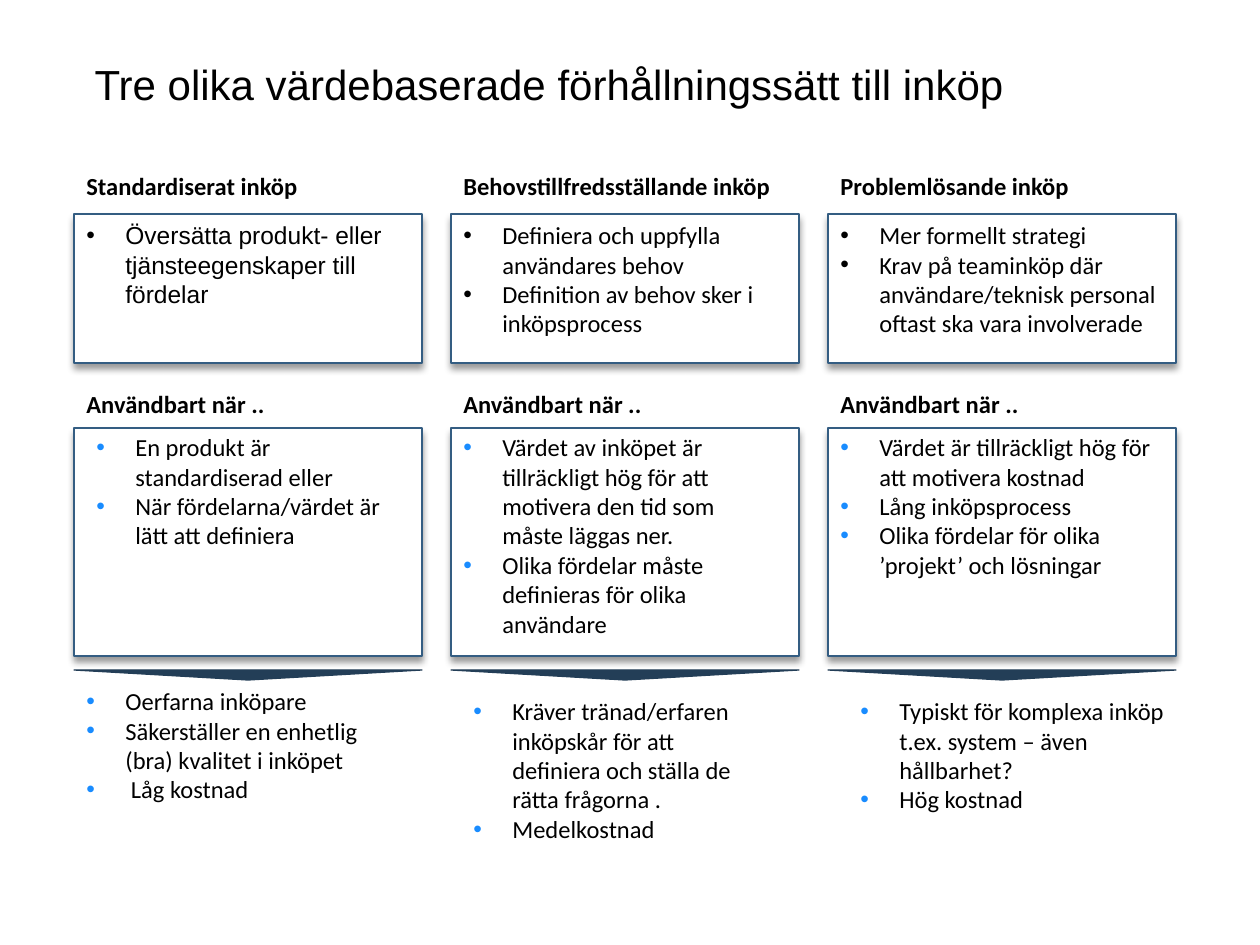
"""Build a slide comparing three value-based approaches to purchasing."""
import pptx
import pptx.dml.color
import pptx.enum.shapes
import pptx.enum.text
import pptx.util
from lxml import etree

RGBColor = pptx.dml.color.RGBColor
SHAPE = pptx.enum.shapes.MSO_SHAPE
ANCHOR = pptx.enum.text.MSO_ANCHOR
ALIGN = pptx.enum.text.PP_ALIGN

BLACK = RGBColor(0x00, 0x00, 0x00)
WHITE = RGBColor(0xFF, 0xFF, 0xFF)
OUTLINE = RGBColor(0x34, 0x5D, 0x82)
NAVY = RGBColor(0x23, 0x3E, 0x57)
BRIGHT = RGBColor(0x19, 0x8C, 0xFF)

PX = 914400 // 126
INDENT = 39
LEFT, PITCH, WIDTH = 74, 377, 348
HEADING_HEIGHT = 42
DEFINITION_HEADING, DEFINITION_TOP, DEFINITION_HEIGHT = 165, 214, 149
USE_HEADING, USE_TOP, USE_TEXT_TOP, USE_HEIGHT = 383, 428, 426, 228
ARROW_TOP, ARROW_HEIGHT = 670, 10

TITLE = "Tre olika värdebaserade förhållningssätt till inköp"
USE_TITLE, USE_TITLE_WIDTH = "Användbart när ..", 205
COLUMNS = [
    {
        "heading": ("Standardiserat inköp", 238),
        "definition": (["Översätta produkt- eller tjänsteegenskaper till fördelar"], 328, "Arial"),
        "use": (["En produkt är standardiserad eller",
                 "När fördelarna/värdet är lätt att definiera"], 10, 328, 131),
        "result": (["Oerfarna inköpare",
                    "Säkerställer en enhetlig (bra) kvalitet i inköpet",
                    " Låg kostnad"], 0, 680, 315, 161),
    },
    {
        "heading": ("Behovstillfredsställande inköp", 335),
        "definition": (["Definiera och uppfylla användares behov",
                        "Definition av behov sker i inköpsprocess"], 338, "Calibri"),
        "use": (["Värdet av inköpet är tillräckligt hög för att motivera den tid som måste läggas ner.",
                 "Olika fördelar måste definieras för olika användare"], 0, 315, 220),
        "result": (["Kräver tränad/erfaren inköpskår för att definiera och ställa de rätta frågorna .",
                    "Medelkostnad"], 10, 690, 315, 190),
    },
    {
        "heading": ("Problemlösande inköp", 256),
        "definition": (["Mer formellt strategi",
                        "Krav på teaminköp där användare/teknisk personal oftast ska vara involverade"],
                       348, "Calibri"),
        "use": (["Värdet är tillräckligt hög för att motivera kostnad",
                 "Lång inköpsprocess",
                 "Olika fördelar för olika ’projekt’ och lösningar"], 0, 338, 161),
        "result": (["Typiskt för komplexa inköp t.ex. system – även hållbarhet?",
                    "Hög kostnad"], 20, 690, 348, 161),
    },
]


def scaled(*lengths):
    return [length * PX for length in lengths]


def add_span(para, text, font="Calibri", size=14, bold=False):
    span = para.add_run()
    span.text = text
    span.font.name = font
    span.font.size = pptx.util.Pt(size)
    span.font.bold = bold
    span.font.color.rgb = BLACK


def add_bullet(para, colour):
    properties = para._p.get_or_add_pPr()
    properties.set("marL", str(INDENT * PX))
    properties.set("indent", str(-INDENT * PX))
    if colour is not None:
        holder = etree.SubElement(properties, pptx.oxml.ns.qn("a:buClr"))
        etree.SubElement(holder, pptx.oxml.ns.qn("a:srgbClr"), val=str(colour))
    etree.SubElement(properties, pptx.oxml.ns.qn("a:buFont"), typeface="Arial")
    etree.SubElement(properties, pptx.oxml.ns.qn("a:buChar"), char="•")


def add_heading(slide, left, top, width, text):
    box = slide.shapes.add_textbox(*scaled(left, top, width, HEADING_HEIGHT))
    box.text_frame.word_wrap = False
    add_span(box.text_frame.paragraphs[0], text, bold=True)


def add_list(slide, left, top, width, height, items, font="Calibri", colour=BRIGHT):
    frame = slide.shapes.add_textbox(*scaled(left, top, width, height)).text_frame
    frame.word_wrap = True
    for index, item in enumerate(items):
        para = frame.add_paragraph() if index else frame.paragraphs[0]
        add_bullet(para, colour)
        add_span(para, item, font)


def add_outline(slide, kind, left, top, height, fill, line):
    shape = slide.shapes.add_shape(kind, *scaled(left, top, WIDTH, height))
    shape.shadow.inherit = False
    shape.fill.solid()
    shape.fill.fore_color.rgb = fill
    shape.line.color.rgb = line
    shape.line.width = pptx.util.Pt(0.75)
    return shape


def add_panel(slide, left, top, height):
    panel = add_outline(slide, SHAPE.RECTANGLE, left, top, height, WHITE, OUTLINE)
    effects = panel._element.spPr.find(pptx.oxml.ns.qn("a:effectLst"))
    shadow = etree.SubElement(effects, pptx.oxml.ns.qn("a:outerShdw"), blurRad=str(pptx.util.Pt(4)),
                              dist=str(pptx.util.Pt(3)), dir="5400000", rotWithShape="0")
    black = etree.SubElement(shadow, pptx.oxml.ns.qn("a:srgbClr"), val=str(BLACK))
    etree.SubElement(black, pptx.oxml.ns.qn("a:alpha"), val="40000")


def add_title(slide):
    title = slide.shapes.title
    title.left, title.top, title.width, title.height = scaled(82, 16, 1071, 136)
    frame = title.text_frame
    frame.auto_size = pptx.enum.text.MSO_AUTO_SIZE.NONE
    frame.vertical_anchor = ANCHOR.MIDDLE
    frame.paragraphs[0].alignment = ALIGN.LEFT
    add_span(frame.paragraphs[0], TITLE, "Arial", 24)


def add_column(slide, left, column):
    heading, heading_width = column["heading"]
    add_heading(slide, left, DEFINITION_HEADING, heading_width, heading)
    add_panel(slide, left, DEFINITION_TOP, DEFINITION_HEIGHT)
    items, width, font = column["definition"]
    add_list(slide, left, DEFINITION_TOP, width, 131, items, font, None)

    add_heading(slide, left, USE_HEADING, USE_TITLE_WIDTH, USE_TITLE)
    add_panel(slide, left, USE_TOP, USE_HEIGHT)
    items, shift, width, height = column["use"]
    add_list(slide, left + shift, USE_TEXT_TOP, width, height, items)

    arrow = add_outline(slide, SHAPE.ISOSCELES_TRIANGLE, left, ARROW_TOP, ARROW_HEIGHT, NAVY, NAVY)
    arrow.rotation = 180
    items, shift, top, width, height = column["result"]
    add_list(slide, left + shift, top, width, height, items)


def main():
    deck = pptx.Presentation()
    deck.slide_width, deck.slide_height = scaled(1260, 945)
    slide = deck.slides.add_slide(deck.slide_layouts[5])
    add_title(slide)
    for index, column in enumerate(COLUMNS):
        add_column(slide, LEFT + index * PITCH, column)
    deck.save("out.pptx")


if __name__ == "__main__":
    main()
